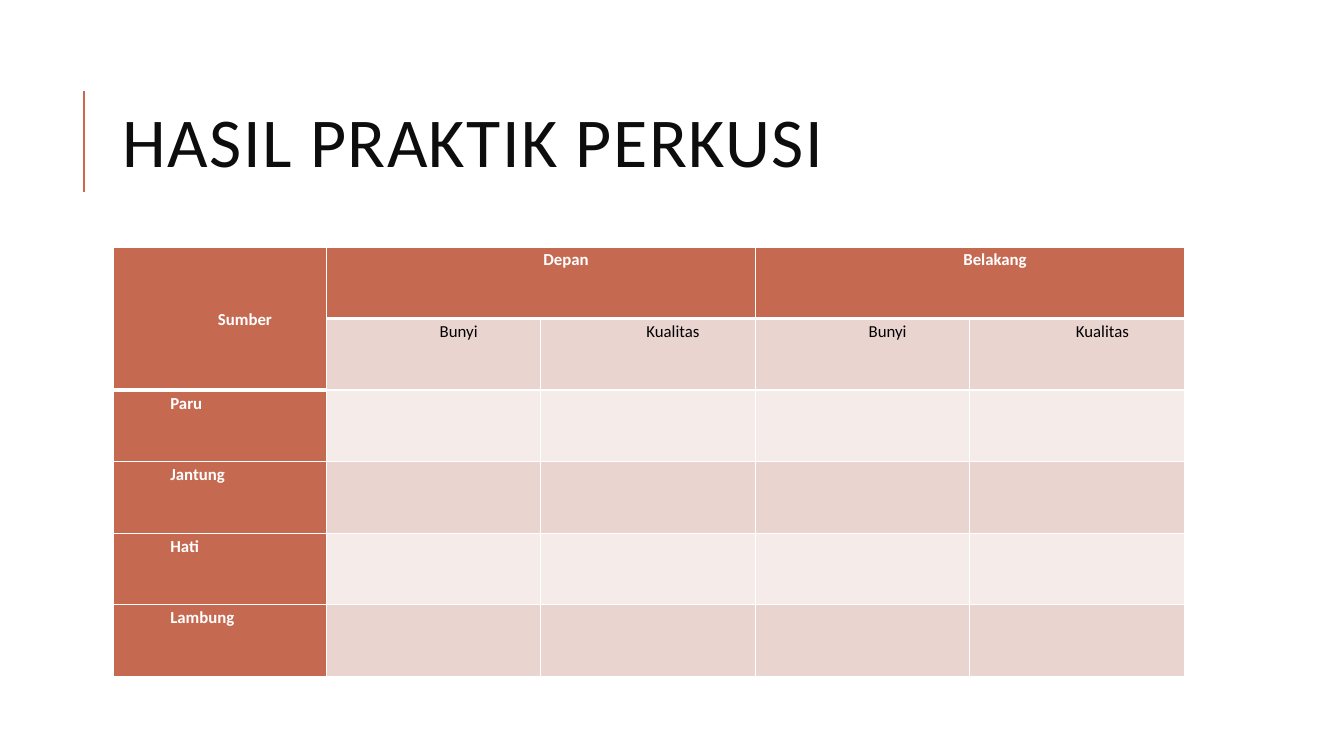
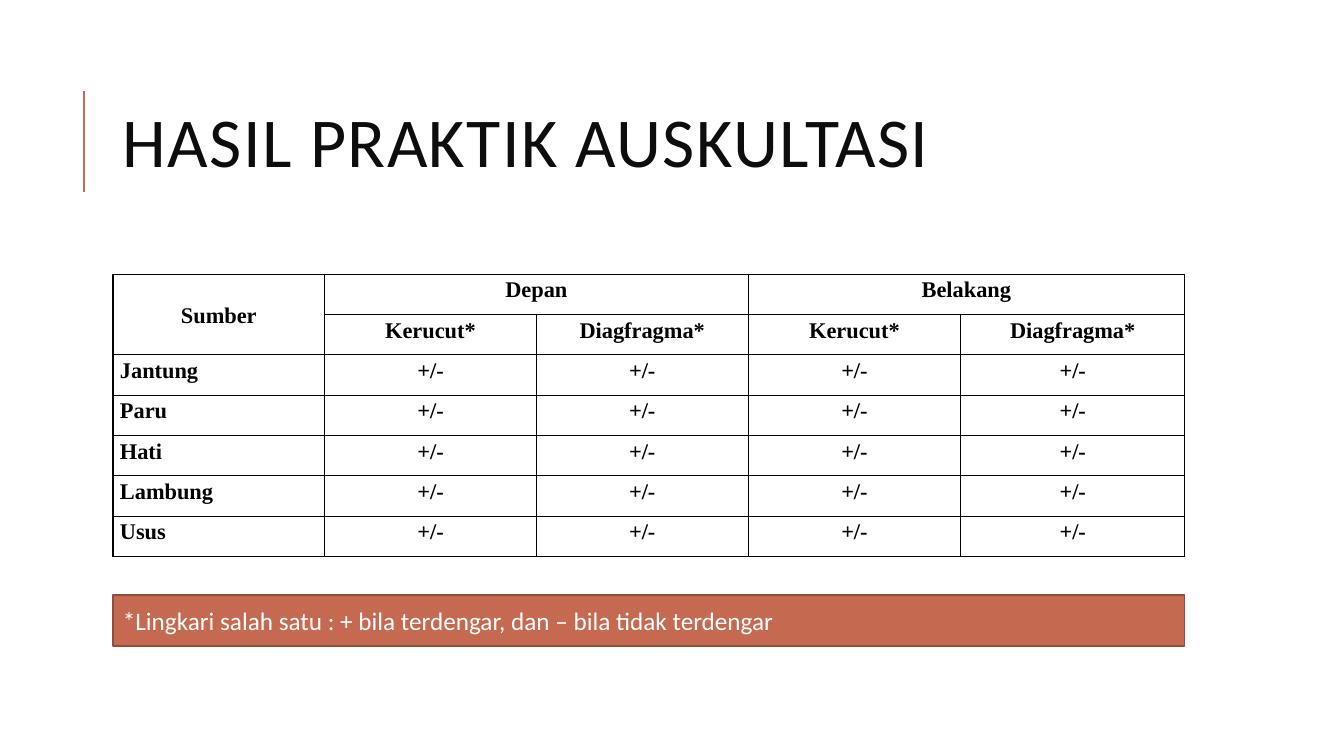
from lxml import etree
from pptx import Presentation
from pptx.dml.color import RGBColor
from pptx.enum.shapes import MSO_CONNECTOR, MSO_SHAPE
from pptx.enum.text import MSO_ANCHOR, PP_ALIGN
from pptx.oxml.ns import qn
from pptx.util import Pt

PX = 9144
LINE, RECT = MSO_CONNECTOR.STRAIGHT, MSO_SHAPE.RECTANGLE
LEFT, CENTER = PP_ALIGN.LEFT, PP_ALIGN.CENTER
TOP, MIDDLE = MSO_ANCHOR.TOP, MSO_ANCHOR.MIDDLE
COLORS = {"accent": "C66951", "edge": "924E3C", "title": "0D0D0D", "black": "000000",
          "white": "FFFFFF", "band": "EAD4D0", "pale": "F5EBE9"}
TITLE_BOX = (112, 64, 1063, 164)
MERGES = (((0, 0), (1, 0)), ((0, 1), (0, 2)), ((0, 3), (0, 4)))


def rgb(name):
    """Return the named palette colour."""
    return RGBColor.from_string(COLORS[name])


def emu(*px):
    """Turn px lengths into EMU."""
    return [n * PX for n in px]


def write(tf, text, size, color, font="Calibri", bold=False, align=LEFT,
          spacing=None, tracking=0, indent=0):
    """Write one formatted paragraph into a text frame."""
    p = tf.paragraphs[0]
    p.alignment = align
    if spacing:
        p.line_spacing = spacing
    if indent:
        pPr = p._p.get_or_add_pPr()
        pPr.set("marL", str(indent * PX))
        pPr.set("indent", "0")
    r = p.add_run()
    r.text = text
    r.font.size, r.font.name, r.font.bold = Pt(size), font, bold
    r.font.color.rgb = rgb(color)
    if tracking:
        r._r.get_or_add_rPr().set("spc", str(tracking * 100))


def add_title(s, box, text):
    """Place the title with the accent rule to its left."""
    x, y, w, h = box
    rule = s.shapes.add_connector(LINE, *emu(x - 29, y + 126, x - 29, y + 26))
    rule.line.color.rgb = rgb("accent")
    rule.line.width = Pt(1.5)
    etree.SubElement(rule._element.spPr, qn("a:effectLst"))
    tf = s.shapes.add_textbox(*emu(x, y, w, h)).text_frame
    tf.word_wrap = True
    tf.vertical_anchor = MIDDLE
    write(tf, text, 50, "title", spacing=0.8, tracking=1)


def set_borders(cell, color, widths):
    """Draw the left, right, top and bottom borders of a cell."""
    tcPr = cell._tc.get_or_add_tcPr()
    for side, width in zip("LRTB", widths):
        ln = etree.SubElement(tcPr, qn("a:ln" + side), w=str(Pt(width)))
        fill = etree.SubElement(ln, qn("a:solidFill"))
        etree.SubElement(fill, qn("a:srgbClr"), val=COLORS[color])


def banded_style(r, c):
    """Return fill, borders and text format for a banded table cell."""
    header_rows = 2 if c == 0 else 1
    header = r < header_rows
    widths = (1, 1, 3 if r == header_rows else 1, 3 if header else 1)
    accent = header or c == 0
    fill = "accent" if accent else "band" if r % 2 else "pale"
    return fill, "white", widths, dict(size=12, color="white" if accent else "black",
                                       bold=accent, indent=50)


def grid_style(r, c):
    """Return fill, borders and text format for a plain grid cell."""
    return None, "black", (1, 1, 1, 1), dict(size=16, color="black", bold=True,
                                             font="Times New Roman")


def add_result_table(s, x, y, cols, row_h, rows, style):
    """Place a result table with two header rows and one row per source."""
    frame = s.shapes.add_table(len(rows), len(cols), *emu(x, y, sum(cols), row_h * len(rows)))
    table = frame.table
    table.first_row = table.horz_banding = False
    for col, width in zip(table.columns, cols):
        col.width = width * PX
    for r, row in enumerate(rows):
        table.rows[r].height = row_h * PX
        for c, text in enumerate(row):
            cell = table.cell(r, c)
            cell.margin_left = cell.margin_right = 7 * PX
            cell.margin_top = cell.margin_bottom = 0
            cell.vertical_anchor = MIDDLE if r == c == 0 else TOP
            fill, border, widths, fmt = style(r, c)
            set_borders(cell, border, widths)
            if fill:
                cell.fill.solid()
                cell.fill.fore_color.rgb = rgb(fill)
            else:
                cell.fill.background()
            if text:
                align = LEFT if c == 0 and r > 1 else CENTER
                write(cell.text_frame, text, align=align, spacing=1.15, **fmt)
    for first, last in MERGES:
        table.cell(*first).merge(table.cell(*last))


def add_note(s, box, text):
    """Place the filled note bar."""
    sp = s.shapes.add_shape(RECT, *emu(*box))
    sp.shadow.inherit = False
    sp.fill.solid()
    sp.fill.fore_color.rgb = rgb("accent")
    sp.line.color.rgb = rgb("edge")
    sp.line.width = Pt(1.25)
    sp.text_frame.word_wrap = True
    sp.text_frame.vertical_anchor = MIDDLE
    write(sp.text_frame, text, 18, "white")


def result_rows(measures, sources, value):
    """Build the header rows and one row per source."""
    return [["Sumber", "Depan", "", "Belakang", ""], ["", *measures * 2],
            *([source] + [value] * 4 for source in sources)]


def add_slide(prs, title):
    """Add a blank slide with its title."""
    s = prs.slides.add_slide(prs.slide_layouts[6])
    add_title(s, TITLE_BOX, title)
    return s


def main():
    """Build and save the presentation."""
    prs = Presentation()
    prs.slide_width, prs.slide_height = emu(1333, 750)
    x, _, w, _ = TITLE_BOX

    s = add_slide(prs, "HASIL PRAKTIK PERKUSI")
    rows = result_rows(["Bunyi", "Kualitas"], ["Paru", "Jantung", "Hati", "Lambung"], "")
    add_result_table(s, x, 245, [212, 212, 213, 213, 213], 71, rows, banded_style)

    s = add_slide(prs, "HASIL PRAKTIK AUSKULTASI")
    rows = result_rows(["Kerucut*", "Diagfragma*"],
                       ["Jantung", "Paru", "Hati", "Lambung", "Usus"], "+/-")
    add_result_table(s, x, 272, [210, 210, 210, 211, 222], 40, rows, grid_style)
    add_note(s, (x, 590, w, 51),
             "*Lingkari salah satu : + bila terdengar, dan – bila tidak terdengar")
    prs.save("out.pptx")


if __name__ == "__main__":
    main()
